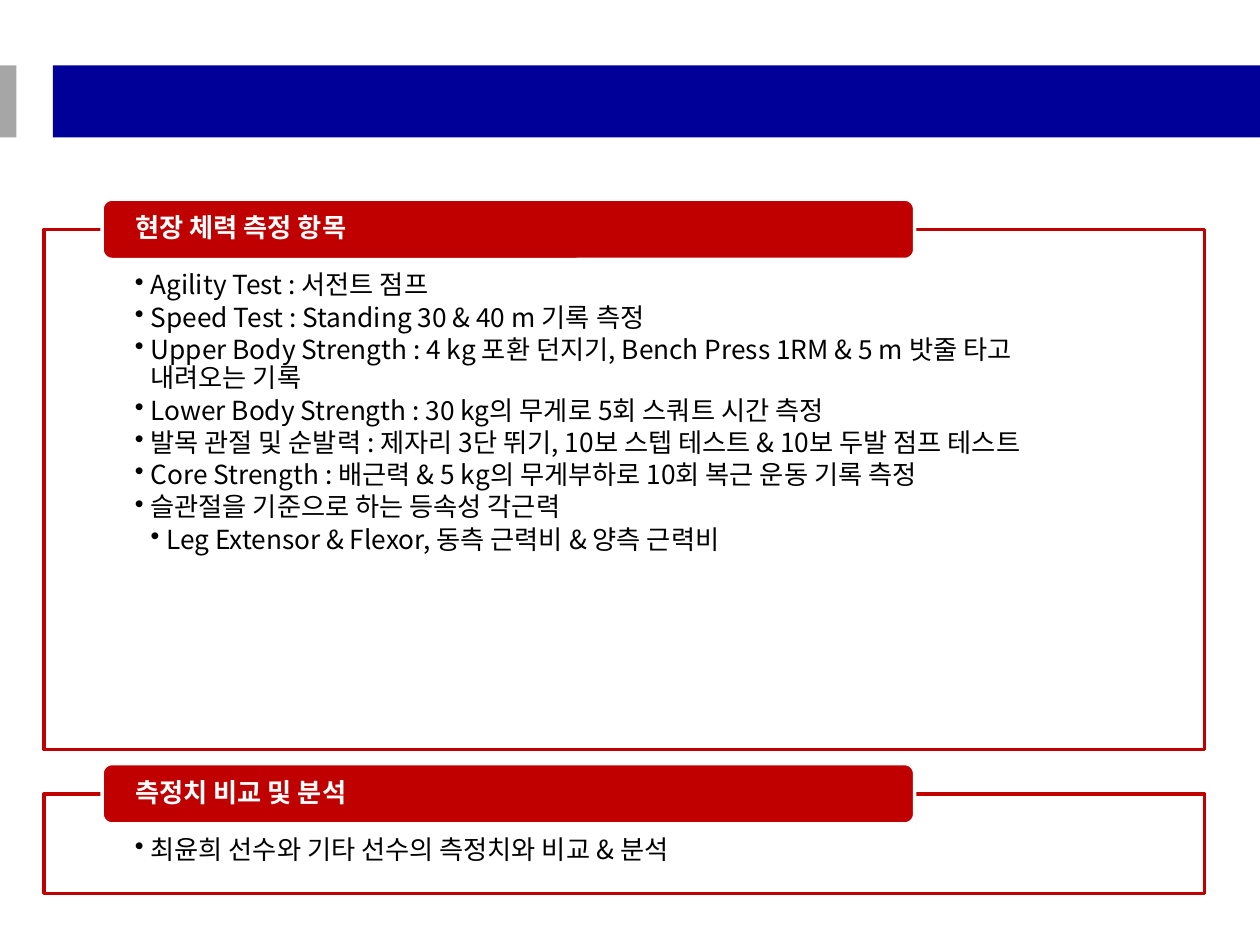
import pptx
import pptx.util
import pptx.dml.color
import pptx.enum.shapes
import pptx.enum.text
import pptx.oxml.ns
from dataclasses import dataclass
from lxml import etree
from pptx.util import Inches, Pt

SHAPE = pptx.enum.shapes.MSO_SHAPE
ANCHOR = pptx.enum.text.MSO_ANCHOR
ALIGN = pptx.enum.text.PP_ALIGN
qn = pptx.oxml.ns.qn


@dataclass(frozen=True)
class Theme:
    navy: str = "000099"
    gray: str = "A6A6A6"
    red: str = "C00000"
    white: str = "FFFFFF"
    black: str = "000000"
    font: str = "Noto Sans CJK KR"
    size: int = 15
    outline: int = 2
    indent: float = 0.125


THEME = Theme()

# Top and height of the panel, heading, then (level, text) items
SECTIONS = [
    (1.82, 4.13, "현장 체력 측정 항목", [
        (1, "Agility Test : 서전트 점프"),
        (1, "Speed Test : Standing 30 & 40 m 기록 측정"),
        (1, "Upper Body Strength : 4 kg 포환 던지기, Bench Press 1RM & 5 m 밧줄 타고 내려오는 기록"),
        (1, "Lower Body Strength : 30 kg의 무게로 5회 스쿼트 시간 측정"),
        (1, "발목 관절 및 순발력 : 제자리 3단 뛰기, 10보 스텝 테스트 & 10보 두발 점프 테스트"),
        (1, "Core Strength : 배근력 & 5 kg의 무게부하로 10회 복근 운동 기록 측정"),
        (1, "슬관절을 기준으로 하는 등속성 각근력"),
        (2, "Leg Extensor & Flexor, 동측 근력비 & 양측 근력비"),
    ]),
    (6.3, 0.79, "측정치 비교 및 분석", [
        (1, "최윤희 선수와 기타 선수의 측정치와 비교 & 분석"),
    ]),
]


def rgb(value):
    return pptx.dml.color.RGBColor.from_string(value)


def set_all(target, **values):
    for name, value in values.items():
        setattr(target, name, value)


def add_box(s, kind, box, fill, line=None):
    sp = s.shapes.add_shape(kind, *map(Inches, box))
    sp.shadow.inherit = False
    sp.fill.solid()
    sp.fill.fore_color.rgb = rgb(fill)
    if line:
        sp.line.color.rgb = rgb(line)
        sp.line.width = Pt(THEME.outline)
    else:
        sp.line.fill.background()
    return sp


def set_frame(sp, insets, anchor):
    left, top, right, bottom = map(Inches, insets)
    tf = sp.text_frame
    set_all(tf, word_wrap=True, vertical_anchor=anchor, margin_left=left,
            margin_top=top, margin_right=right, margin_bottom=bottom)
    return tf


def write(p, text, color, bold, after):
    """Fill a paragraph; after is the gap below as a share of the type size."""
    set_all(p, alignment=ALIGN.LEFT, line_spacing=0.9,
            space_after=Pt(THEME.size * after))
    r = p.add_run()
    r.text = text
    set_all(r.font, size=Pt(THEME.size), bold=bold, name=THEME.font)
    r.font.color.rgb = rgb(color)
    ea = etree.SubElement(r.font._element, qn("a:ea"))
    ea.set("typeface", THEME.font)


def add_bullet(p, level):
    p.level = level
    pPr = p._p.get_or_add_pPr()
    pPr.set("marL", str(Inches(THEME.indent * level)))
    pPr.set("indent", str(-Inches(THEME.indent)))
    etree.SubElement(pPr, qn("a:buChar")).set("char", "•")


def add_panel(s, top, height, items):
    sp = add_box(s, SHAPE.RECTANGLE, (0.35, top, 9.21, height),
                 THEME.white, THEME.red)
    color = sp._element.spPr.find(qn("a:solidFill"))[0]
    etree.SubElement(color, qn("a:alpha")).set("val", "90000")
    tf = set_frame(sp, (0.72, 0.34, 0.72, 0.12), ANCHOR.TOP)
    for i, (level, text) in enumerate(items):
        p = tf.add_paragraph() if i else tf.paragraphs[0]
        add_bullet(p, level)
        write(p, text, THEME.black, False, 0.15)


def add_heading(s, panel_top, text):
    sp = add_box(s, SHAPE.ROUNDED_RECTANGLE,
                 (0.81, panel_top - 0.24, 6.45, 0.48), THEME.red, THEME.white)
    tf = set_frame(sp, (0.24, 0, 0.24, 0), ANCHOR.MIDDLE)
    write(tf.paragraphs[0], text, THEME.white, True, 0.35)


def main():
    prs = pptx.Presentation()
    set_all(prs, slide_width=Inches(10), slide_height=Inches(7.5))
    s = prs.slides.add_slide(prs.slide_layouts[6])
    for left, width, fill in ((0.42, 9.58, THEME.navy), (0, 0.13, THEME.gray)):
        add_box(s, SHAPE.RECTANGLE, (left, 0.52, width, 0.57), fill)
    for top, height, heading, items in SECTIONS:
        add_panel(s, top, height, items)
        add_heading(s, top, heading)
    prs.save("out.pptx")


if __name__ == "__main__":
    main()
